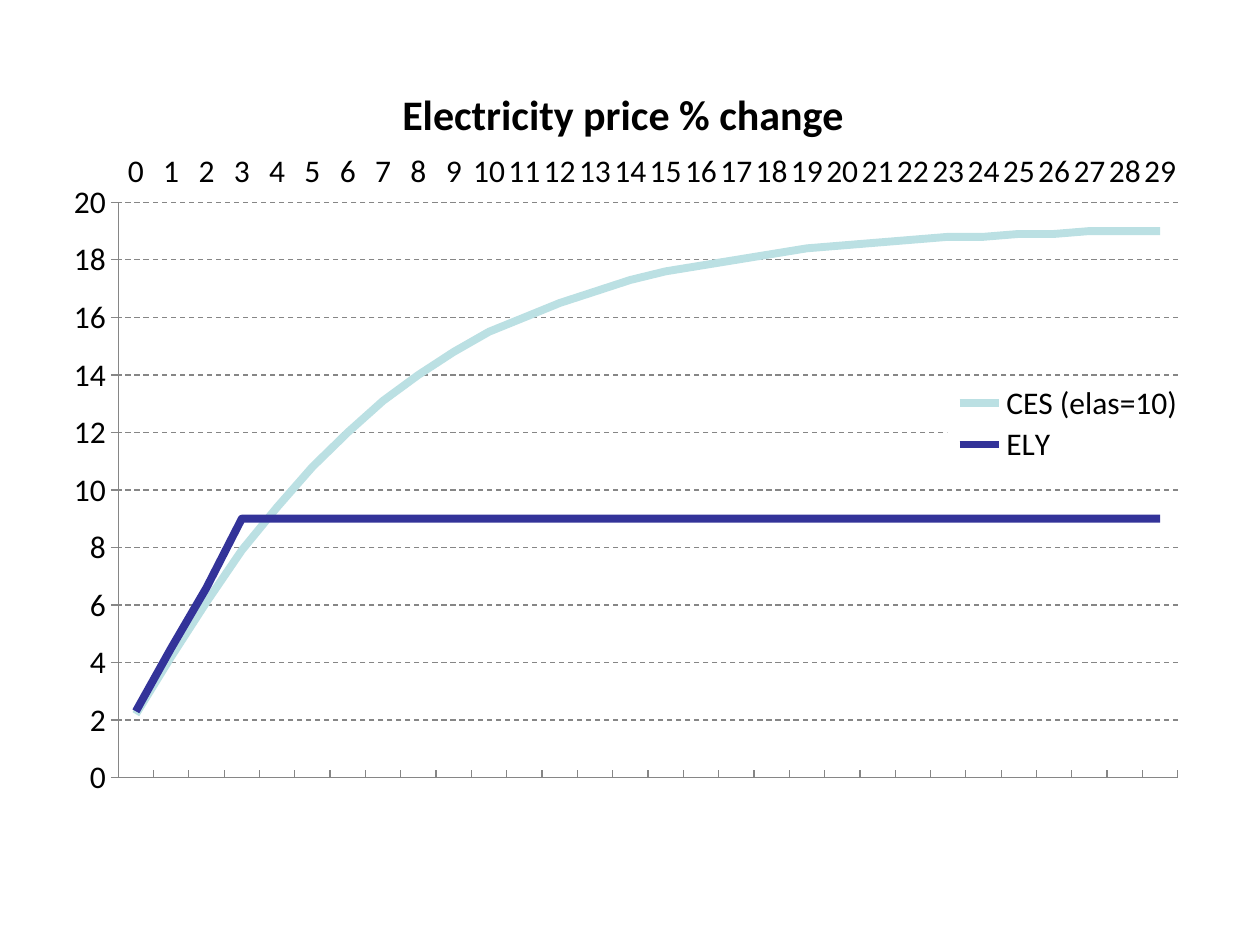
from lxml import etree
from pptx import Presentation
from pptx.chart.data import CategoryChartData
from pptx.dml.color import RGBColor
from pptx.enum.chart import (XL_CHART_TYPE, XL_LEGEND_POSITION as LegendPos,
                             XL_TICK_LABEL_POSITION as LabelPos, XL_TICK_MARK as Tick)
from pptx.enum.dml import MSO_LINE
from pptx.oxml import parse_xml
from pptx.oxml.ns import nsdecls, qn
from pptx.util import Cm, Pt

COLORS = {"text": "000000", "axis": "868686", "legend": "FFFFFF",
          "CES (elas=10)": "BBE0E3", "ELY": "333399"}
FONT = "Calibri"
PRICES = {
    "CES (elas=10)": [2.2, 4.2, 6.1, 7.9, 9.4, 10.8, 12, 13.1, 14, 14.8,
                      15.5, 16, 16.5, 16.9, 17.3, 17.6, 17.8, 18, 18.2, 18.4,
                      18.5, 18.6, 18.7, 18.8, 18.8, 18.9, 18.9, 19, 19, 19],
    "ELY": [2.3, 4.5, 6.6] + [9] * 27,
}


def rgb(name):
    return RGBColor.from_string(COLORS[name])


def set_font(font, size, bold=False):
    font.name, font.size, font.bold = FONT, Pt(size), bold
    font.color.rgb = rgb("text")


def set_line(line, color, width, dash=None):
    line.color.rgb = rgb(color)
    line.width = Pt(width)
    if dash:
        line.dash_style = dash


def set_layout(parent, successor, x, y, w=None, h=None, inner=False):
    """Place a chart part by fractions of the chart's box, ahead of successor."""
    for old in parent.findall(qn("c:layout")):
        parent.remove(old)
    layout = parse_xml(f"<c:layout {nsdecls('c')}><c:manualLayout/></c:layout>")
    items = [("layoutTarget", "inner")] if inner else []
    items += [("xMode", "edge"), ("yMode", "edge"), ("x", x), ("y", y)]
    if w is not None:
        items += [("w", w), ("h", h)]
    for tag, value in items:
        etree.SubElement(layout[0], qn(f"c:{tag}")).set("val", str(value))
    successor.addprevious(layout)


def format_title(chart, text):
    tf = chart.chart_title.text_frame
    tf.text = text
    set_font(tf.paragraphs[0].runs[0].font, 24, bold=True)
    chart.chart_title.include_in_layout = False if hasattr(
        chart.chart_title, "include_in_layout") else None
    title = chart._chartSpace.chart.find(qn("c:title"))
    set_layout(title, title.find(qn("c:overlay")), 0.3, 0.05)


def format_axes(chart):
    cat, val = chart.category_axis, chart.value_axis
    for axis, tick in ((cat, Tick.INSIDE), (val, Tick.OUTSIDE)):
        axis.major_tick_mark, axis.minor_tick_mark = tick, Tick.NONE
        set_font(axis.tick_labels.font, 18)
        set_line(axis.format.line, "axis", 0.75)
    cat.tick_label_position = LabelPos.HIGH
    skip = parse_xml(f'<c:tickLblSkip {nsdecls("c")} val="1"/>')
    cat._element.find(qn("c:noMultiLvlLbl")).addprevious(skip)
    val.minimum_scale, val.maximum_scale, val.major_unit = 0, 20, 2
    val.tick_labels.number_format = "General"
    val.tick_labels.number_format_is_linked = False
    val.has_major_gridlines = True
    set_line(val.major_gridlines.format.line, "axis", 0.75, MSO_LINE.DASH)


def format_legend(chart):
    chart.has_legend = True
    legend = chart.legend
    legend.position = LegendPos.RIGHT
    legend.include_in_layout = True
    set_font(legend.font, 18)
    element = legend._element
    overlay = element.find(qn("c:overlay"))
    set_layout(element, overlay, 0.78, 0.44, 0.21, 0.11)
    overlay.addnext(parse_xml(
        f'<c:spPr {nsdecls("c", "a")}><a:solidFill><a:srgbClr val="{COLORS["legend"]}"/>'
        "</a:solidFill><a:ln><a:noFill/></a:ln></c:spPr>"))


def add_price_chart(s, x, y, w, h):
    data = CategoryChartData()
    data.categories = [str(i) for i in range(30)]
    for name, values in PRICES.items():
        data.add_series(name, values)
    chart = s.shapes.add_chart(XL_CHART_TYPE.LINE, x, y, w, h, data).chart
    set_font(chart.font, 10)
    format_title(chart, "Electricity price % change")
    format_axes(chart)
    format_legend(chart)
    plot = chart.plots[0]
    plot.vary_by_categories = False
    for series in plot.series:
        series.smooth = False
        set_line(series.format.line, series.name, 4.5)
    area = chart._chartSpace.chart.plotArea
    set_layout(area, plot._element, 0.06, 0.21, 0.92, 0.74, inner=True)


def main():
    prs = Presentation()
    prs.slide_width, prs.slide_height = Cm(25.4), Cm(19.05)
    s = prs.slides.add_slide(prs.slide_layouts[6])
    add_price_chart(s, Cm(0.99), Cm(0.79), Cm(23.22), Cm(15.67))
    prs.save("out.pptx")


if __name__ == "__main__":
    main()
